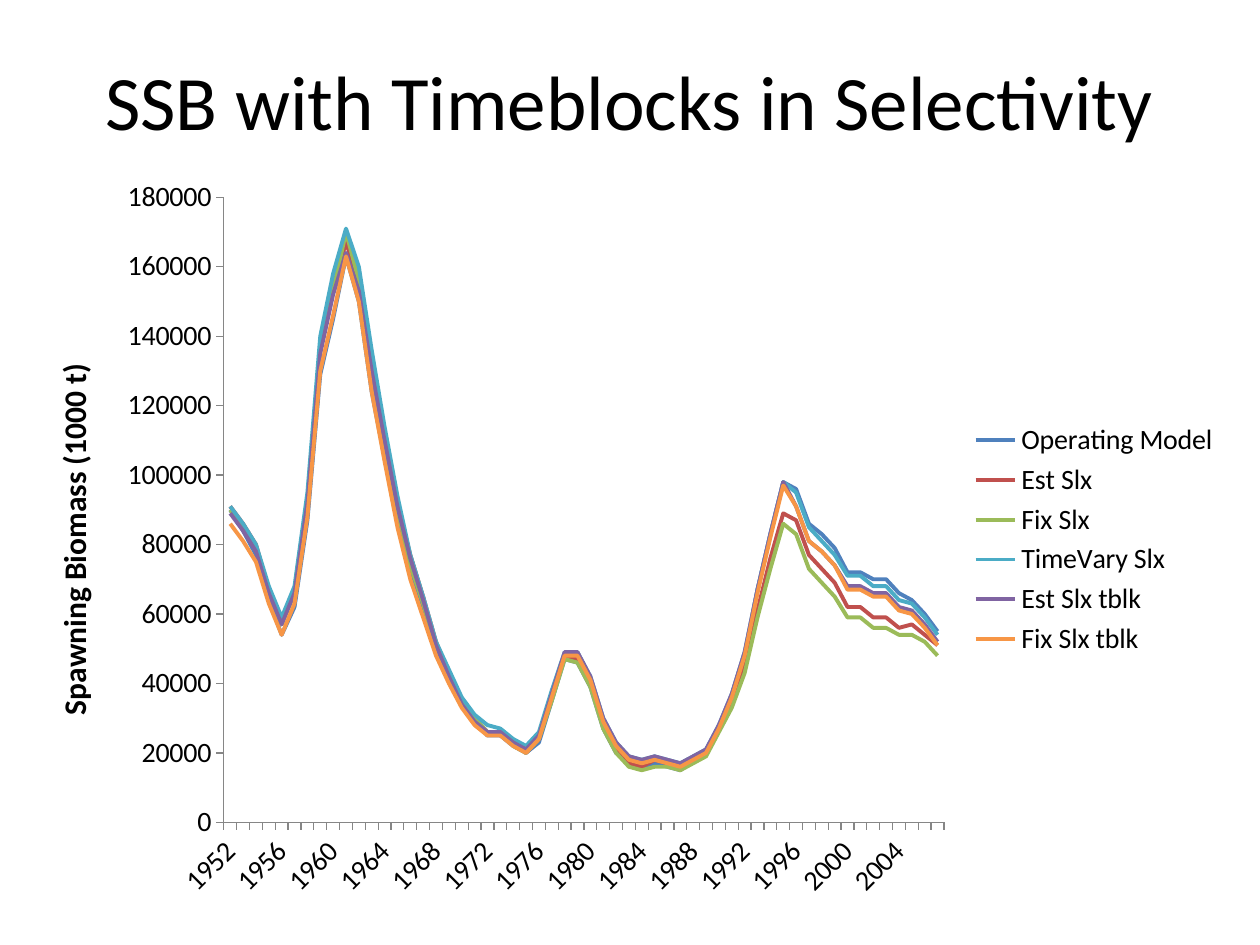
import pptx
import pptx.chart.data
import pptx.dml.color
import pptx.enum.chart
import pptx.enum.text
import pptx.oxml
import pptx.oxml.ns
import pptx.util
from pptx.util import Cm

RGBColor = pptx.dml.color.RGBColor
Pt = pptx.util.Pt
qn = pptx.oxml.ns.qn

BLACK = RGBColor.from_string("000000")
AXIS_GREY = RGBColor.from_string("868686")
BLUE = RGBColor.from_string("4F81BD")
RED = RGBColor.from_string("C0504D")
GREEN = RGBColor.from_string("9BBB59")
TEAL = RGBColor.from_string("4BACC6")
PURPLE = RGBColor.from_string("8064A2")
ORANGE = RGBColor.from_string("F79646")
FONT = "Calibri"

TITLE = "SSB with Timeblocks in Selectivity"
VALUE_TITLE = "Spawning Biomass (1000 t)"
FIRST_YEAR = 1952
UNIT = 1000

# Biomass of "Est Slx tblk", one value per year in units of UNIT
BASE = [
    89, 84, 78, 66, 57, 66, 92, 135, 152, 164, 153, 130, 110, 91, 76, 64, 51, 42, 34,
    29, 26, 26, 23, 21, 25, 37, 49, 49, 42, 30, 23, 19, 18, 19, 18, 17, 19, 21,
    28, 37, 49, 67, 83, 98, 91, 81, 78, 74, 68, 68, 66, 66, 62, 61, 57, 52]

# Each series is BASE plus an offset, given in these years and linear in between
KNOTS = [1952, 1957, 1960, 1961, 1963, 1966, 1970, 1980, 1990, 1995, 1996, 2003, 2007]
SERIES = [
    ("Operating Model", BLUE, [1, -4, -7, -1, -6, -4, 0, -3, -1, 0, 5, 4, 3]),
    ("Est Slx", RED, [2, 1, 2, 3, 2, 1, 1, -2, -1, -9, -4, -7, -1]),
    ("Fix Slx", GREEN, [1, 0, 1, 6, 0, -2, 1, -3, -2, -12, -8, -10, -4]),
    ("TimeVary Slx", TEAL, [2, 2, 6, 7, 6, 1, 2, 0, 0, 0, 4, 2, 2]),
    ("Est Slx tblk", PURPLE, [0] * len(KNOTS)),
    ("Fix Slx tblk", ORANGE, [-3, -3, -6, -1, -6, -6, -1, -1, -1, -1, 0, -1, -1]),
]
PLOT_LAYOUT = {"x": 0.16, "y": 0.04, "w": 0.6, "h": 0.84}  # shares of the chart
LABEL_EVERY = 4


def offset_in(year, offsets):
    """Interpolate between the two knots around the year."""
    i = max(k for k in range(len(KNOTS) - 1) if KNOTS[k] <= year)
    share = (year - KNOTS[i]) / (KNOTS[i + 1] - KNOTS[i])
    return offsets[i] + share * (offsets[i + 1] - offsets[i])


def biomass_values(offsets):
    return [round(base + offset_in(year, offsets)) * UNIT
            for year, base in enumerate(BASE, FIRST_YEAR)]


def format_font(font, size, bold=False, color=BLACK):
    font.name, font.size, font.bold = FONT, Pt(size), bold
    font.color.rgb = color


def write_text(tf, text, size, bold=False, color=BLACK):
    p = tf.paragraphs[0]
    p.alignment = pptx.enum.text.PP_ALIGN.CENTER
    r = p.add_run()
    r.text = text
    format_font(r.font, size, bold, color)


def format_axis(axis):
    axis.has_major_gridlines = False
    axis.major_tick_mark = pptx.enum.chart.XL_TICK_MARK.OUTSIDE
    axis.minor_tick_mark = pptx.enum.chart.XL_TICK_MARK.NONE
    axis.format.line.color.rgb = AXIS_GREY
    axis.format.line.width = Pt(0.75)
    format_font(axis.tick_labels.font, 16)


def chart_element(tag, **attributes):
    e = pptx.oxml.parse_xml(
        f'<c:{tag} xmlns:c="http://schemas.openxmlformats.org/drawingml/2006/chart"/>')
    for name, value in attributes.items():
        e.set(name, str(value))
    return e


def place_plot(chart):
    """Fix the inner plot area at PLOT_LAYOUT."""
    plot_area = chart.plots[0]._element.getparent()
    for old in plot_area.findall(qn("c:layout")):
        plot_area.remove(old)
    layout, manual = chart_element("layout"), chart_element("manualLayout")
    manual.append(chart_element("layoutTarget", val="inner"))
    for side in "xy":
        manual.append(chart_element(side + "Mode", val="edge"))
    for side, share in PLOT_LAYOUT.items():
        manual.append(chart_element(side, val=share))
    layout.append(manual)
    plot_area.insert(0, layout)


def add_biomass_chart(s):
    data = pptx.chart.data.CategoryChartData(number_format="0")
    data.categories = [str(FIRST_YEAR + i) for i in range(len(BASE))]
    for name, _, offsets in SERIES:
        data.add_series(name, biomass_values(offsets))
    chart = s.shapes.add_chart(pptx.enum.chart.XL_CHART_TYPE.LINE, Cm(0.64), Cm(3.38),
                               Cm(24.2), Cm(15), data).chart
    chart.has_title = False
    format_font(chart.font, 10)
    for line, (_, color, _) in zip(chart.plots[0].series, SERIES):
        line.smooth = False
        line.format.line.color.rgb = color
        line.format.line.width = Pt(2.25)

    years, biomass = chart.category_axis, chart.value_axis
    format_axis(years)
    years._element.find(".//" + qn("a:bodyPr")).set("rot", str(-45 * 60000))
    years._element.find(qn("c:noMultiLvlLbl")).addprevious(
        chart_element("tickLblSkip", val=LABEL_EVERY))

    format_axis(biomass)
    biomass.minimum_scale, biomass.maximum_scale = 0, 180 * UNIT
    biomass.major_unit = 20 * UNIT
    biomass.has_title = True
    title_tf = biomass.axis_title.text_frame
    write_text(title_tf, VALUE_TITLE, 18, bold=True)
    title_tf._txBody.find(qn("a:bodyPr")).set("rot", str(-90 * 60000))

    chart.has_legend = True
    chart.legend.position = pptx.enum.chart.XL_LEGEND_POSITION.RIGHT
    chart.legend.include_in_layout = False
    format_font(chart.legend.font, 16)
    place_plot(chart)


def main():
    prs = pptx.Presentation()
    prs.slide_width, prs.slide_height = Cm(25.4), Cm(19.05)
    s = prs.slides.add_slide(prs.slide_layouts[6])
    tf = s.shapes.add_textbox(Cm(1.27), Cm(0.43), Cm(22.86), Cm(3.18)).text_frame
    tf.word_wrap = True
    tf.vertical_anchor = pptx.enum.text.MSO_ANCHOR.MIDDLE
    write_text(tf, TITLE, 44)
    add_biomass_chart(s)
    prs.save("out.pptx")


if __name__ == "__main__":
    main()
